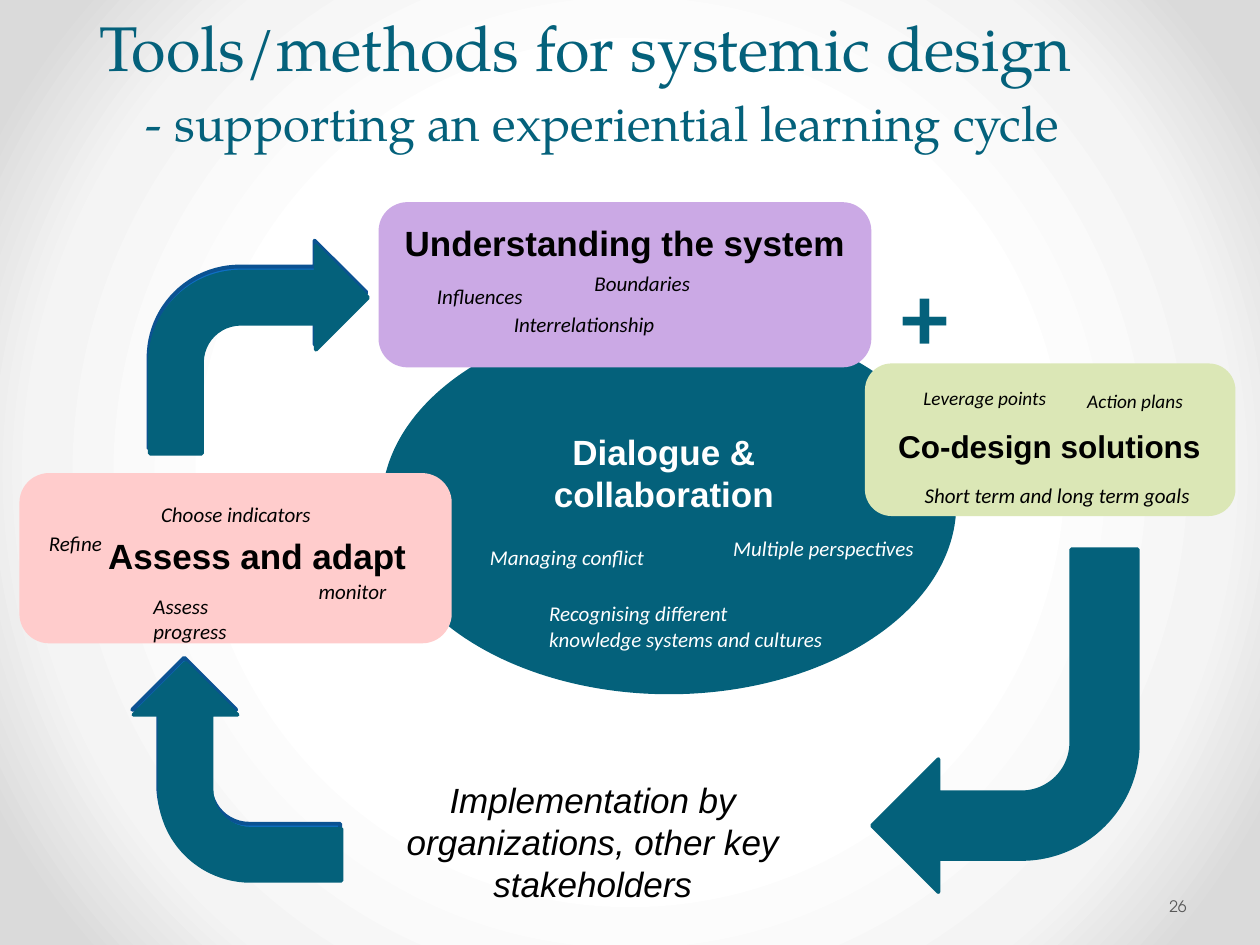
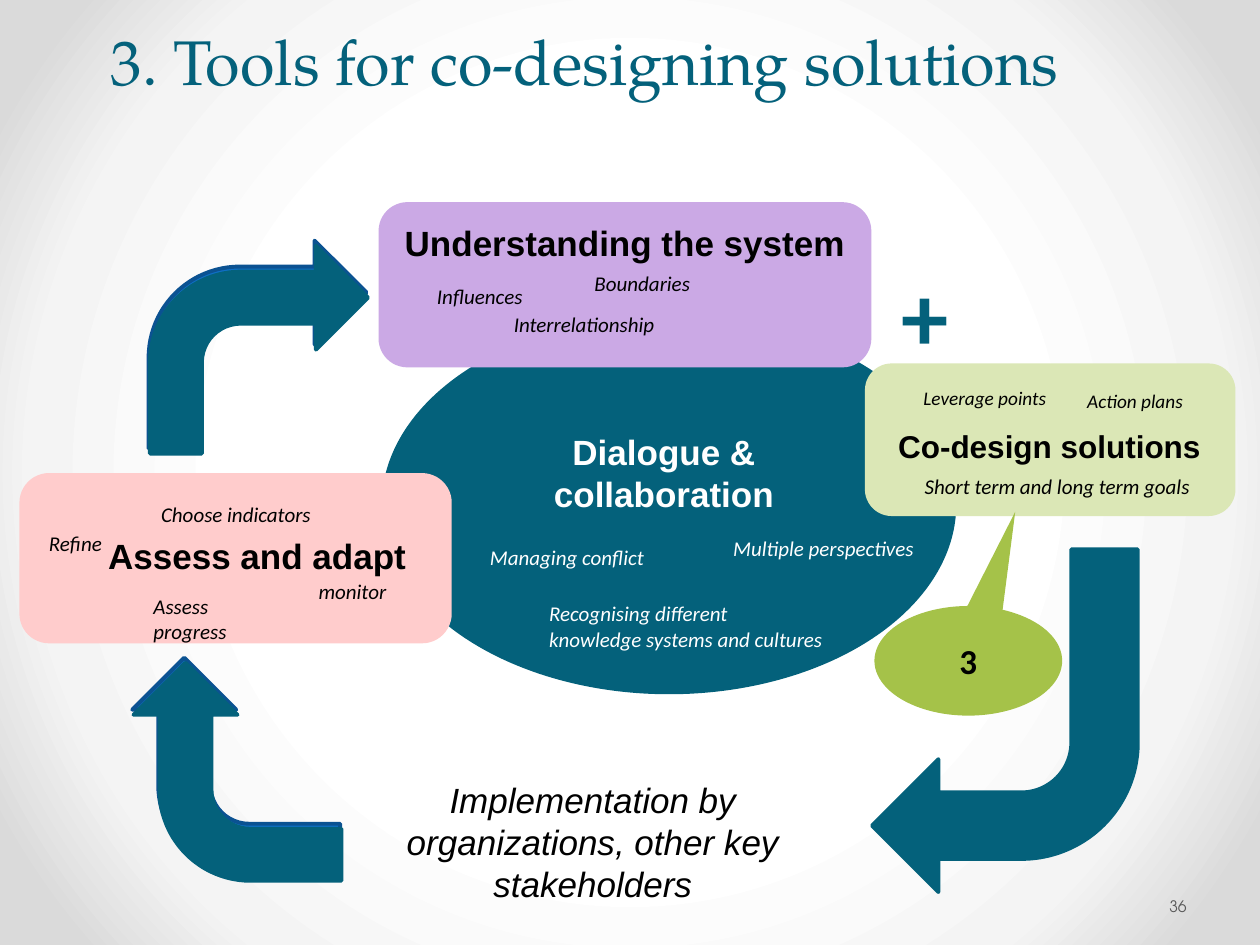
from lxml.etree import SubElement
from pptx import Presentation
from pptx.dml.color import RGBColor
from pptx.enum.shapes import MSO_SHAPE
from pptx.enum.text import MSO_ANCHOR, PP_ALIGN
from pptx.oxml.ns import qn
from pptx.util import Inches, Pt

# Shared style
TEAL = RGBColor(0x04, 0x61, 0x7B)
BLUE = RGBColor(0x0F, 0x6F, 0xC6)
BLUE_EDGE = RGBColor(0x0B, 0x52, 0x92)
PURPLE = RGBColor(0xCB, 0xA9, 0xE5)
PALE_GREEN = RGBColor(0xDB, 0xE7, 0xB6)
GREEN = RGBColor(0xA5, 0xC2, 0x49)
PINK = RGBColor(0xFF, 0xCC, 0xCC)
GREY = RGBColor(0x59, 0x59, 0x59)
WHITE = RGBColor(0xFF, 0xFF, 0xFF)
BLACK = RGBColor(0x00, 0x00, 0x00)
BACKDROP = [(50, WHITE), (76, RGBColor(0xF4, 0xF4, 0xF4)), (92, RGBColor(0xDA, 0xDA, 0xDA))]
TITLE_FONT, NUMBER_FONT = "TeX Gyre Pagella", "TeX Gyre Adventor"
HEADING_FONT, NOTE_FONT = "Arial", "Calibri"
EDGE = 2.25

# The slide is a grid of 10 columns by 7.5 rows; places are (column, row, columns, rows)
COLUMNS, ROWS = 10, 7.5
CELL = Inches(1)
TITLE_ROWS = 0.75
NOTE_ROWS = 0.3

# Content: one entry per slide
SLIDES = [
    {"number": "26", "goals_row": 3.78, "callout": None,
     "titles": [("Tools/methods for systemic design", 0.69, 0.03, 8.98, 36),
                ("- supporting an experiential learning cycle", 1.06, 0.62, 7.54, 28)]},
    {"number": "36", "goals_row": 3.71, "callout": "3",
     "titles": [("3. Tools for co-designing solutions", 0.78, 0.14, 8.98, 36)]},
]

# Content: the stages of the cycle; notes are (text, column, row, columns)
GOALS = "Short term and long term goals"
STAGES = [
    {"heading": "Dialogue & collaboration", "heading_at": (3.6, 3.37, 3.34, 0.77),
     "panel": MSO_SHAPE.OVAL, "panel_at": (3.03, 2.5, 4.56, 3.01),
     "fill": TEAL, "edge": None, "ink": WHITE, "align": PP_ALIGN.CENTER,
     "notes": [("Multiple perspectives", 5.72, 4.2, 1.85),
               ("Managing conflict", 3.79, 4.27, 1.85),
               ("Recognising different knowledge systems and cultures", 4.26, 4.72, 2.38)]},
    {"heading": "Co-design solutions", "heading_at": (7.03, 3.34, 2.64, 0.4),
     "heading_size": 18, "note_size": 11,
     "panel_at": (6.88, 2.9, 2.91, 1.18), "fill": PALE_GREEN,
     "notes": [("Leverage points", 7.23, 3.02, 1.37),
               ("Action plans", 8.53, 3.04, 1.37)]},
    {"heading": "Understanding the system", "heading_at": (3.11, 1.71, 3.7, 0.77),
     "panel_at": (3.02, 1.62, 3.88, 1.28), "fill": PURPLE, "align": PP_ALIGN.CENTER,
     "notes": [("Influences", 3.37, 2.2, 1.8),
               ("Boundaries", 4.62, 2.1, 1.8),
               ("Interrelationship", 3.98, 2.42, 1.6)]},
    {"heading": "Assess and adapt", "heading_at": (0.76, 4.19, 2.6, 0.44),
     "panel_at": (0.17, 3.77, 3.4, 1.32), "fill": PINK,
     "notes": [("Assess progress", 1.12, 4.66, 1.24),
               ("Choose indicators", 1.18, 3.93, 1.46),
               ("monitor", 2.43, 4.54, 0.79),
               ("Refine", 0.29, 4.16, 1.63)]},
]
IMPLEMENTATION = "Implementation by organizations, other key stakeholders"

# Arrows between stages: (place, rotation, has a blue echo behind it)
ARROWS = [
    ((6.92, 4.36, 2.11, 2.72), 180, False),
    ((1.02, 5.3, 1.73, 1.65), 270, True),
    ((1.19, 1.95, 1.73, 1.65), 0, True),
]
ECHO_SHIFT = (-0.01, -0.04)


def on_grid(place):
    return [round(length * CELL) for length in place]


def write(frame, text, *, size, font, color=BLACK, bold=False, italic=False,
          align=PP_ALIGN.LEFT, anchor=MSO_ANCHOR.TOP, spacing=None):
    frame.word_wrap = True
    frame.vertical_anchor = anchor
    paragraph = frame.paragraphs[0]
    paragraph.alignment = align
    if spacing:
        paragraph.line_spacing = spacing
    run = paragraph.add_run()
    run.text = text
    run.font.size, run.font.name = Pt(size), font
    run.font.bold, run.font.italic = bold, italic
    run.font.color.rgb = color


def add_text(slide, text, place, **style):
    frame = slide.shapes.add_textbox(*on_grid(place)).text_frame
    write(frame, text, **style)
    return frame


def add_note(slide, text, column, row, columns, **style):
    add_text(slide, text, (column, row, columns, NOTE_ROWS),
             **{"size": 12, "font": NOTE_FONT, "italic": True, **style})


def add_panel(slide, outline, place, fill, edge=None, rotation=0):
    panel = slide.shapes.add_shape(outline, *on_grid(place))
    panel.shadow.inherit = False
    panel.rotation = rotation
    panel.fill.solid()
    panel.fill.fore_color.rgb = fill
    if edge is None:
        panel.line.fill.background()
    else:
        panel.line.color.rgb = edge
        panel.line.width = Pt(EDGE)
    return panel


def set_backdrop(master):
    """Radial gradient shared by every slide."""
    master.background.fill.gradient()
    gradient = next(master.element.iter(qn("a:gradFill")))
    for child in list(gradient):
        gradient.remove(child)
    stops = SubElement(gradient, qn("a:gsLst"))
    for percent, color in BACKDROP:
        stop = SubElement(stops, qn("a:gs"), pos=str(percent * 1000))
        SubElement(stop, qn("a:srgbClr"), val=str(color))
    circle = SubElement(gradient, qn("a:path"), path="circle")
    SubElement(circle, qn("a:fillToRect"), {side: "50000" for side in "ltrb"})


def add_arrows(slide):
    for place, rotation, has_echo in ARROWS:
        if has_echo:
            column, row, columns, rows = place
            echo = (column + ECHO_SHIFT[0], row + ECHO_SHIFT[1], columns, rows)
            add_panel(slide, MSO_SHAPE.BENT_ARROW, echo, BLUE, BLUE_EDGE, rotation)
        add_panel(slide, MSO_SHAPE.BENT_ARROW, place, TEAL, TEAL, rotation)


def add_stage(slide, stage):
    ink = stage.get("ink", BLACK)
    add_panel(slide, stage.get("panel", MSO_SHAPE.ROUNDED_RECTANGLE), stage["panel_at"],
              stage["fill"], stage.get("edge", stage["fill"]))
    add_text(slide, stage["heading"], stage["heading_at"], font=HEADING_FONT, bold=True,
             size=stage.get("heading_size", 20), color=ink,
             align=stage.get("align", PP_ALIGN.LEFT))
    for note in stage["notes"]:
        add_note(slide, *note, color=ink, size=stage.get("note_size", 12))


def add_cycle(slide, goals_row):
    for stage in STAGES:
        add_stage(slide, stage)
    add_note(slide, GOALS, 7.24, goals_row, 2.52)
    add_arrows(slide)
    add_text(slide, "+", (7.06, 1.99, 0.69, 1.01), size=54, font=NOTE_FONT,
             color=TEAL, bold=True)
    add_text(slide, IMPLEMENTATION, (3.09, 6.13, 3.23, 1.5), size=20, font=HEADING_FONT,
             italic=True, align=PP_ALIGN.CENTER)


def add_callout(slide, text):
    callout = add_panel(slide, MSO_SHAPE.OVAL_CALLOUT, (6.94, 4.81, 1.49, 0.87), GREEN)
    callout.adjustments[0], callout.adjustments[1] = 0.25, -1.36
    write(callout.text_frame, text, size=20, font=NOTE_FONT, bold=True,
          align=PP_ALIGN.CENTER, anchor=MSO_ANCHOR.MIDDLE)


def add_number(slide, number):
    frame = add_text(slide, number, (9.25, 6.99, 0.61, 0.4), size=9, font=NUMBER_FONT,
                     color=GREY, anchor=MSO_ANCHOR.MIDDLE)
    frame.margin_left = Inches(0.03)
    frame.margin_right = Inches(0.05)


def main():
    deck = Presentation()
    deck.slide_width, deck.slide_height = on_grid((COLUMNS, ROWS))
    set_backdrop(deck.slide_master)
    for content in SLIDES:
        slide = deck.slides.add_slide(deck.slide_layouts[6])
        add_number(slide, content["number"])
        add_cycle(slide, content["goals_row"])
        if content["callout"]:
            add_callout(slide, content["callout"])
        for title, column, row, columns, size in content["titles"]:
            add_text(slide, title, (column, row, columns, TITLE_ROWS), size=size,
                     font=TITLE_FONT, color=TEAL, anchor=MSO_ANCHOR.MIDDLE, spacing=0.9)
    deck.save("out.pptx")


if __name__ == "__main__":
    main()
